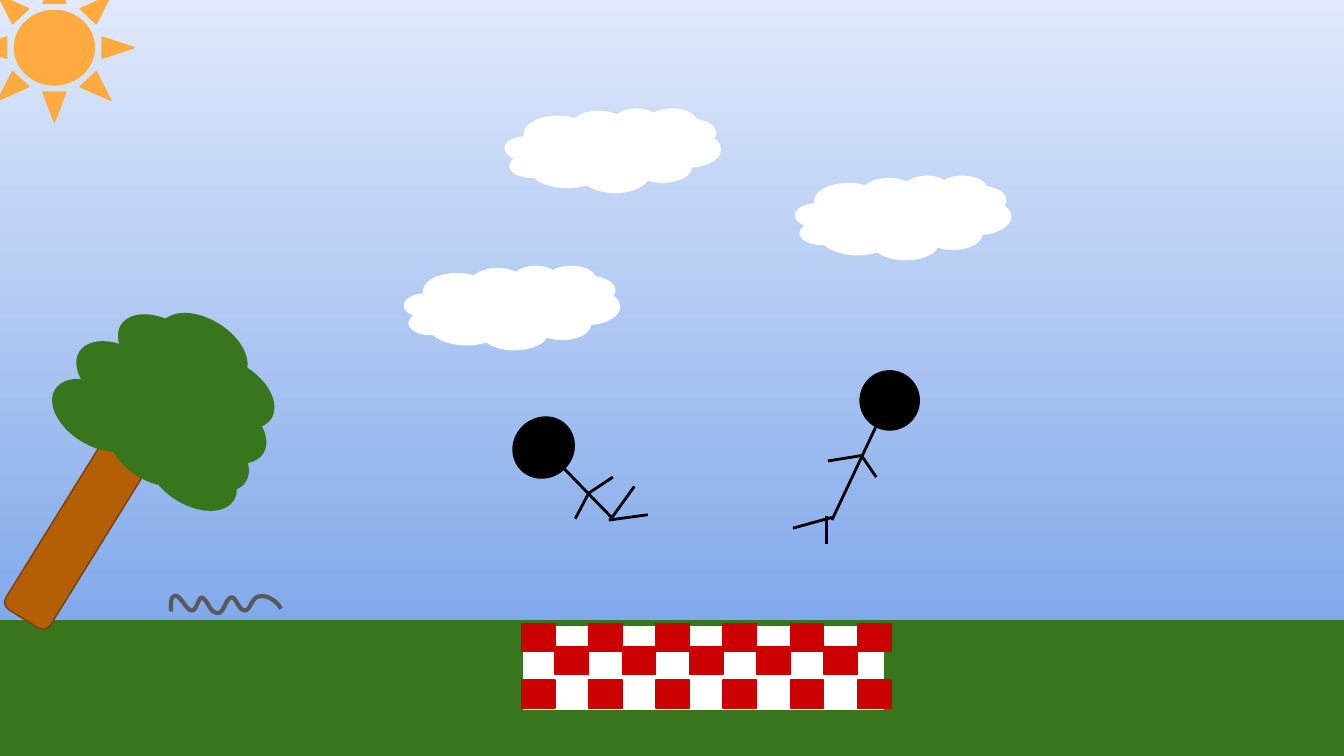
from pptx import Presentation
from pptx.dml.color import RGBColor
from pptx.enum import shapes
from pptx.oxml.ns import qn
from pptx.util import Inches, Pt
from lxml import etree

SKY_TOP = RGBColor(0xDF, 0xE9, 0xFB)
SKY_BOTTOM = RGBColor(0x6E, 0x9B, 0xE7)
GREEN = RGBColor(0x38, 0x76, 0x1D)
BARK = RGBColor(0xB4, 0x5F, 0x06)
BARK_EDGE = RGBColor(0x78, 0x3F, 0x04)
RED = RGBColor(0xCC, 0x00, 0x00)
WHITE = RGBColor(0xFF, 0xFF, 0xFF)
BLACK = RGBColor(0x00, 0x00, 0x00)
ORANGE = RGBColor(0xFF, 0xAB, 0x40)
GREY = RGBColor(0x59, 0x59, 0x59)

KIND = shapes.MSO_SHAPE
LEAN = 31.8  # tilt of the tree, in degrees


def add_solid(slide, kind, left, top, width, height, fill, edge=None, turn=0):
    """Add a filled preset shape with a thin outline."""
    shape = slide.shapes.add_shape(
        kind, Inches(left), Inches(top), Inches(width), Inches(height))
    shape.shadow.inherit = False
    shape.fill.solid()
    shape.fill.fore_color.rgb = fill
    shape.line.color.rgb = edge or fill
    shape.line.width = Pt(0.75)
    shape.rotation = turn
    return shape


def add_limb(slide, start, end):
    """Add one straight stroke of a stick figure."""
    limb = slide.shapes.add_connector(
        shapes.MSO_CONNECTOR.STRAIGHT, *(Inches(n) for n in (*start, *end)))
    limb.line.color.rgb = BLACK
    limb.line.width = Pt(1.5)
    etree.SubElement(limb._element.spPr, qn("a:effectLst"))


def paint_sky(slide):
    fill = slide.background.fill
    fill.gradient()
    fill.gradient_angle = 270
    for stop, color in zip(fill.gradient_stops, (SKY_TOP, SKY_BOTTOM)):
        stop.color.rgb = color


def draw_tree(slide, left, top):
    # Trunk
    add_solid(slide, KIND.ROUNDED_RECTANGLE, left + 0.06, top + 0.68,
              0.39, 1.67, BARK, BARK_EDGE, LEAN)
    # Crown of overlapping leaf clumps
    clumps = [(0, 0.49), (0.42, 0.75), (0.39, 0.34), (0.74, 0.56),
              (0.18, 0.21), (0.8, 0.79), (0.93, 0.58), (0.62, 0.29),
              (0.99, 0.32), (0.49, 0.01), (0.71, 0.93), (0.79, 0)]
    for x, y in clumps:
        add_solid(slide, KIND.OVAL, left + x, top + y, 0.72, 0.44,
                  GREEN, turn=LEAN)


def draw_blanket(slide, left, top):
    add_solid(slide, KIND.RECTANGLE, left + 0.02, top + 0.02,
              2.67, 0.62, WHITE)
    # Red checks: the middle row is shifted by one check
    check = 0.25
    for y, first, count in ((0, 0, 6), (0.17, 1, 5), (0.42, 0, 6)):
        for i in range(count):
            add_solid(slide, KIND.RECTANGLE, left + (first + 2 * i) * check,
                      top + y, check, 0.21, RED)


def draw_figure(slide, left, top, head_width, turn, limbs, flipped=False):
    """Draw a head at the given corner; limbs are relative to that corner."""
    head = add_solid(slide, KIND.SMILEY_FACE, left, top, head_width, 0.44,
                     BLACK, turn=turn)
    if flipped:
        head._element.spPr.find(qn("a:xfrm")).set("flipH", "1")
    for x1, y1, x2, y2 in limbs:
        add_limb(slide, (left + x1, top + y1), (left + x2, top + y2))


def draw_squiggle(slide, left, top):
    """Draw a wavy line, sampling a chain of cubic curves."""
    start = (0, 0.12)
    curves = [
        ((0.01, 0.09), (-0.01, 0.03), (0.02, 0.01)),
        ((0.07, -0.03), (0.12, 0.14), (0.17, 0.11)),
        ((0.2, 0.09), (0.21, 0), (0.24, 0.02)),
        ((0.28, 0.05), (0.29, 0.12), (0.34, 0.13)),
        ((0.39, 0.15), (0.4, 0.05), (0.44, 0.02)),
        ((0.48, -0.01), (0.5, 0.1), (0.54, 0.11)),
        ((0.59, 0.13), (0.6, 0.02), (0.65, 0.01)),
        ((0.71, -0.01), (0.79, 0.04), (0.82, 0.1)),
    ]
    steps = 12
    points = [start]
    for a, b, end in curves:
        for i in range(1, steps + 1):
            t = i / steps
            s = 1 - t
            points.append(tuple(
                s**3 * p + 3 * s * s * t * q + 3 * s * t * t * r + t**3 * e
                for p, q, r, e in zip(start, a, b, end)))
        start = end
    places = [(Inches(left + x), Inches(top + y)) for x, y in points]
    builder = slide.shapes.build_freeform(*places[0])
    builder.add_line_segments(places[1:], close=False)
    squiggle = builder.convert_to_shape()
    squiggle.shadow.inherit = False
    squiggle.fill.background()
    squiggle.line.color.rgb = GREY
    squiggle.line.width = Pt(2.25)


def main():
    deck = Presentation()
    deck.slide_width = Inches(10)
    deck.slide_height = deck.slide_width * 9 // 16
    slide = deck.slides.add_slide(deck.slide_layouts[6])

    # Scenery
    paint_sky(slide)
    add_solid(slide, KIND.RECTANGLE, 0, 4.62, 10, 1, GREEN)
    draw_tree(slide, 0.36, 2.38)
    draw_blanket(slide, 3.88, 4.64)

    # Picnickers: spine, legs, arms
    draw_figure(slide, 6.4, 2.76, 0.44, 25.9, [
        (0.12, 0.41, -0.21, 1.11),
        (-0.21, 1.09, -0.5, 1.17), (-0.25, 1.08, -0.25, 1.29),
        (0.12, 0.79, 0.01, 0.63), (0.01, 0.63, -0.24, 0.67)])
    draw_figure(slide, 3.81, 3.11, 0.47, 316.4, [
        (0.39, 0.38, 0.74, 0.74),
        (0.47, 0.75, 0.57, 0.56), (0.57, 0.56, 0.75, 0.44),
        (0.72, 0.76, 1.01, 0.72), (0.73, 0.76, 0.91, 0.51)], flipped=True)

    # Clouds and sun
    for left, top in ((3.76, 0.81), (5.92, 1.31), (3.01, 1.98)):
        add_solid(slide, KIND.CLOUD, left, top, 1.6, 0.62, WHITE)
    add_solid(slide, KIND.SUN, -0.19, -0.2, 1.19, 1.11, ORANGE)

    draw_squiggle(slide, 1.27, 4.43)
    deck.save("out.pptx")


if __name__ == "__main__":
    main()
